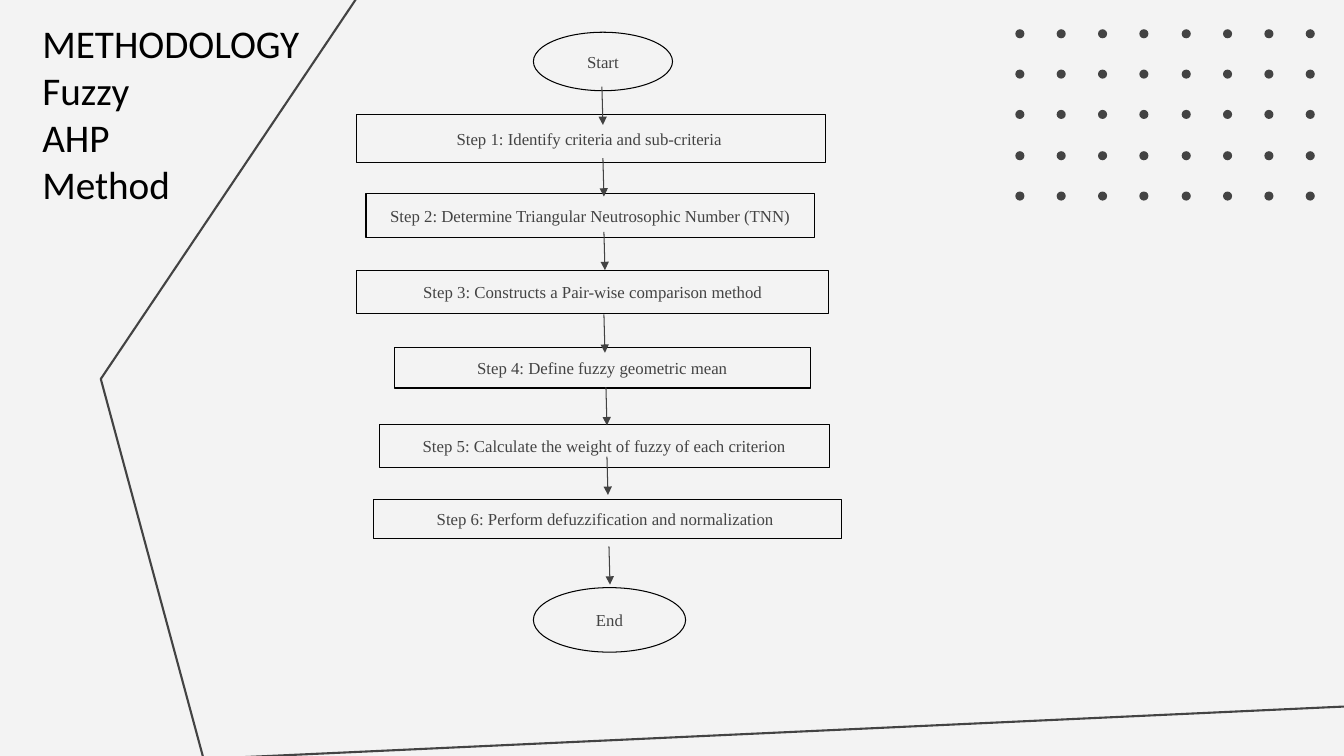
from lxml import etree
from pptx import Presentation
from pptx.dml.color import RGBColor
from pptx.enum.shapes import MSO_CONNECTOR, MSO_SHAPE
from pptx.enum.text import MSO_ANCHOR, MSO_AUTO_SIZE, PP_ALIGN
from pptx.oxml.ns import qn
from pptx.util import Pt

PX = 9144  # 100 px to the inch
COLORS = {"back": "F3F3F3", "dark": "434343", "arrow": "424242", "black": "000000"}
RGB = {name: RGBColor.from_string(value) for name, value in COLORS.items()}


def add_preset(kind, *box):
    sp = shapes.add_shape(kind, *(v * PX for v in box))
    sp.shadow.inherit = False
    return sp


def write(sp, text, align, anchor, font):
    tf = sp.text_frame
    tf.text = text
    frame = {"word_wrap": True, "auto_size": MSO_AUTO_SIZE.NONE, "vertical_anchor": anchor}
    for key, value in frame.items():
        setattr(tf, key, value)
    for p in tf.paragraphs:
        p.alignment = align
        for r in p.runs:
            r.font.name, r.font.size, r.font.color.rgb = font


prs = Presentation()
prs.slide_width, prs.slide_height = 1333 * PX, 750 * PX
s = prs.slides.add_slide(prs.slide_layouts[5])
shapes = s.shapes
s.background.fill.solid()
s.background.fill.fore_color.rgb = RGB["back"]

# Background outline
builder = shapes.build_freeform(362, -14, scale=PX)
builder.add_line_segments([(100, 376), (202, 753), (1333, 701)], close=False)
outline = builder.convert_to_shape()
outline.shadow.inherit = False
outline.fill.background()
outline.line.color.rgb = RGB["dark"]
outline.line.width = Pt(1.5)

# Dot grid
for row in range(5):
    for col in range(8):
        dot = add_preset(MSO_SHAPE.OVAL, 1007 + round(col * 288 / 7),
                         29 + round(row * 161 / 4), 9, 9)
        dot.fill.solid()
        dot.fill.fore_color.rgb = RGB["dark"]
        dot.line.fill.background()

# Title
title = shapes.title
title.left, title.top, title.width, title.height = (v * PX for v in (32, 14, 589, 199))
write(title, "METHODOLOGY\nFuzzy\nAHP\nMethod", PP_ALIGN.LEFT, MSO_ANCHOR.TOP,
      ("Calibri", Pt(28), RGB["black"]))

# Flowchart nodes
OVAL, RECT = MSO_SHAPE.OVAL, MSO_SHAPE.RECTANGLE
NODES = [
    (OVAL, (529, 32, 138, 58), "Start"),
    (RECT, (354, 114, 465, 47), "Step 1: Identify criteria and sub-criteria "),
    (RECT, (363, 192, 445, 44), "Step 2: Determine Triangular Neutrosophic Number (TNN)"),
    (RECT, (354, 268, 468, 43), "Step 3: Constructs a Pair-wise comparison method"),
    (RECT, (391, 345, 413, 40), "Step 4: Define fuzzy geometric mean"),
    (RECT, (376, 421, 447, 43), "Step 5: Calculate the weight of fuzzy of each criterion"),
    (RECT, (370, 496, 465, 38), "Step 6: Perform defuzzification and normalization "),
    (OVAL, (529, 583, 151, 64), "End"),
]
for kind, box, text in NODES:
    node = add_preset(kind, *box)
    node.fill.background()
    node.line.color.rgb = RGB["black"]
    node.line.width = Pt(0.75)
    write(node, text, PP_ALIGN.CENTER, MSO_ANCHOR.MIDDLE,
          ("Times New Roman", Pt(12), RGB["dark"]))

# Arrows, all of the same length and slant
ARROW_STARTS = [(597, 86), (598, 157), (599, 230), (599, 312), (601, 384), (602, 453), (604, 542)]
for x, y in ARROW_STARTS:
    arrow = shapes.add_connector(MSO_CONNECTOR.STRAIGHT,
                                 *(v * PX for v in (x, y, x + 1, y + 38)))
    arrow.line.color.rgb = RGB["arrow"]
    arrow.line.width = Pt(0.75)
    etree.SubElement(arrow.line._get_or_add_ln(), qn("a:tailEnd"), type="triangle")
    etree.SubElement(arrow._element.spPr, qn("a:effectLst"))

prs.save("out.pptx")
